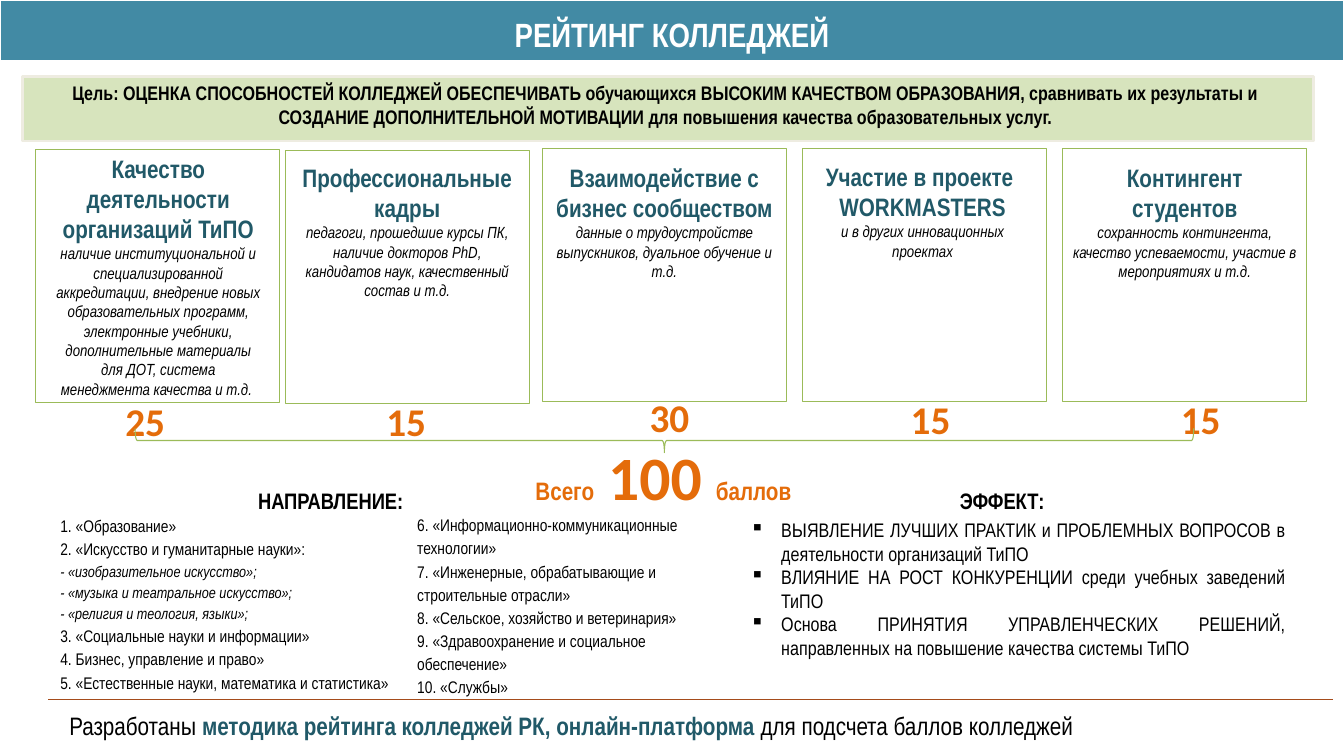
from pptx import Presentation
from pptx.dml.color import RGBColor
from pptx.enum.shapes import MSO_CONNECTOR, MSO_SHAPE
from pptx.enum.text import MSO_ANCHOR, PP_ALIGN
from pptx.oxml.ns import qn
from pptx.util import Inches, Pt
from lxml import etree

LEFT, CENTER, JUSTIFY = PP_ALIGN.LEFT, PP_ALIGN.CENTER, PP_ALIGN.JUSTIFY
TOP, MIDDLE, BOTTOM = MSO_ANCHOR.TOP, MSO_ANCHOR.MIDDLE, MSO_ANCHOR.BOTTOM
RECTANGLE, PENTAGON, BRACE = MSO_SHAPE.RECTANGLE, MSO_SHAPE.PENTAGON, MSO_SHAPE.LEFT_BRACE
STRAIGHT = MSO_CONNECTOR.STRAIGHT

NARROW, CALIBRI = "Arial Narrow", "Calibri"
BLACK, WHITE, TEAL, DARK_TEAL = "000000", "FFFFFF", "428AA4", "215968"
GREEN, PALE_GREEN, CREAM = "9BBB59", "D7E4BD", "EEECE1"
ORANGE, BROWN = "E46C0A", "A54C1B"

CARD_WIDTH, CARD_HEIGHT = 2.42, 2.51
SCORE_WIDTH, SCORE_HEIGHT = 0.6, 0.47

GOAL = [
    "Цель: ОЦЕНКА СПОСОБНОСТЕЙ КОЛЛЕДЖЕЙ ОБЕСПЕЧИВАТЬ обучающихся ВЫСОКИМ КАЧЕСТВОМ "
    "ОБРАЗОВАНИЯ, сравнивать их результаты и ",
    "СОЗДАНИЕ ДОПОЛНИТЕЛЬНОЙ МОТИВАЦИИ для повышения качества образовательных услуг. ",
]

CRITERIA = [
    ((0.35, 1.48), (0.45, 1.47, 2.24, 2.56), ["Качество деятельности организаций ТиПО"],
     "наличие институциональной и специализированной аккредитации, внедрение новых "
     "образовательных программ, электронные учебники, дополнительные материалы для ДОТ, "
     "система менеджмента качества и т.д. ", "25", (1.44, 3.94)),
    ((2.83, 1.49), (2.86, 1.56, 2.36, 1.48), ["Профессиональные кадры"],
     "педагоги, прошедшие курсы ПК, наличие докторов PhD, кандидатов наук, качественный "
     "состав и т.д.", "15", (4.03, 3.94)),
    ((5.38, 1.47), (5.38, 1.56, 2.42, 1.29), ["Взаимодействие с бизнес сообществом"],
     "данные о трудоустройстве выпускников, дуальное обучение и т.д.", "30", (6.64, 3.9)),
    ((7.96, 1.47), (7.96, 1.55, 2.38, 1.09), ["Участие в проекте ", "WORKMASTERS"],
     "и в других инновационных проектах", "15", (9.23, 3.92)),
    ((10.54, 1.47), (10.54, 1.56, 2.42, 1.29), ["Контингент студентов"],
     "сохранность контингента, качество успеваемости, участие в мероприятиях и т.д.",
     "15", (11.91, 3.92)),
]

FIRST_FIELDS = [
    "1. «Образование»",
    "2. «Искусство и гуманитарные науки»: ",
    "- «изобразительное искусство»;",
    "- «музыка и театральное искусство»;",
    "- «религия и теология, языки»;",
    "3. «Социальные науки и информации»",
    "4. Бизнес, управление и право»",
    "5. «Естественные науки, математика и статистика»",
]
OTHER_FIELDS = [
    "6. «Информационно-коммуникационные технологии»",
    "7. «Инженерные, обрабатывающие и строительные отрасли»",
    "8. «Сельское, хозяйство и ветеринария»",
    "9. «Здравоохранение и социальное обеспечение»",
    "10. «Службы»",
]
EFFECTS = [
    "ВЫЯВЛЕНИЕ ЛУЧШИХ ПРАКТИК и ПРОБЛЕМНЫХ ВОПРОСОВ в деятельности организаций ТиПО",
    "ВЛИЯНИЕ НА РОСТ КОНКУРЕНЦИИ среди учебных заведений ТиПО",
    "Основа ПРИНЯТИЯ УПРАВЛЕНЧЕСКИХ РЕШЕНИЙ, направленных на повышение качества системы ТиПО",
]


def color(value):
    return RGBColor.from_string(value)


def style(font, size, shade=BLACK, bold=False, italic=False, name=NARROW):
    font.size = Pt(size)
    font.color.rgb = color(shade)
    font.bold = bold
    font.italic = italic
    font.name = name


def add_panel(page, kind, area, fill, line, width):
    panel = page.shapes.add_shape(kind, *map(Inches, area))
    panel.shadow.inherit = False
    if fill:
        panel.fill.solid()
        panel.fill.fore_color.rgb = color(fill)
    else:
        panel.fill.background()
    panel.line.color.rgb = color(line)
    panel.line.width = Pt(width)
    return panel


def prepare_frame(box, anchor=TOP, inset=True):
    frame = box.text_frame
    frame.word_wrap = True
    frame.vertical_anchor = anchor
    if not inset:
        frame.margin_left = frame.margin_right = 0
        frame.margin_top = frame.margin_bottom = 0
    return frame


def add_text_box(page, area, anchor=TOP, inset=True):
    return prepare_frame(page.shapes.add_textbox(*map(Inches, area)), anchor, inset)


def add_para(frame, text, align, size, spacing=None, **look):
    first = frame.paragraphs[0]
    para = frame.add_paragraph() if first.runs else first
    para.alignment = align
    para.line_spacing = spacing
    para.add_run().text = text
    style(para.font, size, **look)
    return para


def add_spans(frame, align, spans):
    para = frame.paragraphs[0]
    para.alignment = align
    for text, size, look in spans:
        span = para.add_run()
        span.text = text
        style(span.font, size, **look)


def add_bullet(para):
    properties = para._p.get_or_add_pPr()
    properties.set("marL", str(Inches(0.31)))
    properties.set("indent", str(-Inches(0.31)))
    bullet = etree.Element(qn("a:buChar"), char="▪")
    properties.find(qn("a:defRPr")).addprevious(bullet)


def add_rule(page, start, end):
    rule = page.shapes.add_connector(STRAIGHT, *map(Inches, start + end))
    rule.line.color.rgb = color(BROWN)
    rule.line.width = Pt(0.75)
    etree.SubElement(rule._element.spPr, qn("a:effectLst"))


def add_header(page):
    add_panel(page, RECTANGLE, (0, 0, 13.33, 0.61), TEAL, WHITE, 2)
    title = add_text_box(page, (0, 0.18, 13.33, 0.36), inset=False)
    add_para(title, "РЕЙТИНГ КОЛЛЕДЖЕЙ", CENTER, 24, 0.9, shade=WHITE, bold=True)
    banner = add_panel(page, PENTAGON, (0.22, 0.76, 12.81, 0.64), PALE_GREEN, CREAM, 2)
    banner.adjustments[0] = 0
    frame = prepare_frame(banner, MIDDLE, inset=False)
    frame.margin_bottom = Inches(0.08)
    for text in GOAL:
        add_para(frame, text, CENTER, 14, bold=True)


def add_criterion(page, corner, text_area, headings, details, score, score_spot):
    add_panel(page, RECTANGLE, corner + (CARD_WIDTH, CARD_HEIGHT), WHITE, GREEN, 0.75)
    frame = add_text_box(page, text_area)
    for heading in headings:
        add_para(frame, heading, CENTER, 18, shade=DARK_TEAL, bold=True)
    add_para(frame, details, CENTER, 11.5, italic=True)
    middle, top = score_spot
    score_area = (middle - SCORE_WIDTH / 2, top, SCORE_WIDTH, SCORE_HEIGHT)
    score_frame = add_text_box(page, score_area, BOTTOM, inset=False)
    add_para(score_frame, score, CENTER, 28, shade=ORANGE, bold=True, name=CALIBRI)


def add_total(page):
    brace = add_panel(page, BRACE, (6.47, -0.88, 0.24, 10.5), None, GREEN, 0.75)
    brace.rotation = 270
    accent = {"shade": ORANGE, "bold": True}
    total = add_text_box(page, (5.08, 4.35, 3, 0.74), BOTTOM, inset=False)
    add_spans(total, CENTER, [("Всего", 18, accent),
                              (" 100 ", 44, {**accent, "name": CALIBRI}),
                              ("баллов", 18, accent)])


def add_lists(page):
    for left, heading in ((0.42, "НАПРАВЛЕНИЕ:"), (7.08, "ЭФФЕКТ:")):
        frame = add_text_box(page, (left, 4.78, 5.72, 0.37))
        add_para(frame, heading, CENTER, 16, bold=True)
    first = add_text_box(page, (0.5, 5.04, 3.81, 1.9))
    for text in FIRST_FIELDS:
        detail = text.startswith("-")
        add_para(first, text, JUSTIFY, 11 if detail else 12, 1.15, italic=detail)
    other = add_text_box(page, (4.04, 5.03, 3.14, 1.96))
    for text in OTHER_FIELDS:
        add_para(other, text, LEFT, 12, 1.15)
    effects = add_text_box(page, (7.34, 5.09, 5.51, 1.71))
    for text in EFFECTS:
        add_bullet(add_para(effects, text, JUSTIFY, 14))


def add_footer(page):
    add_rule(page, (0.48, 6.94), (13.22, 6.94))
    footer = add_text_box(page, (0.59, 7, 12.74, 0.4))
    add_spans(footer, JUSTIFY, [
        ("Разработаны ", 18, {}),
        ("методика рейтинга колледжей РК, онлайн-платформа ", 18,
         {"shade": DARK_TEAL, "bold": True}),
        ("для подсчета баллов колледжей", 18, {})])


def main():
    deck = Presentation()
    deck.slide_width, deck.slide_height = Inches(13.33), Inches(7.5)
    page = deck.slides.add_slide(deck.slide_layouts[6])
    add_header(page)
    for criterion in CRITERIA:
        add_criterion(page, *criterion)
    add_total(page)
    add_lists(page)
    add_footer(page)
    deck.save("out.pptx")


if __name__ == "__main__":
    main()
